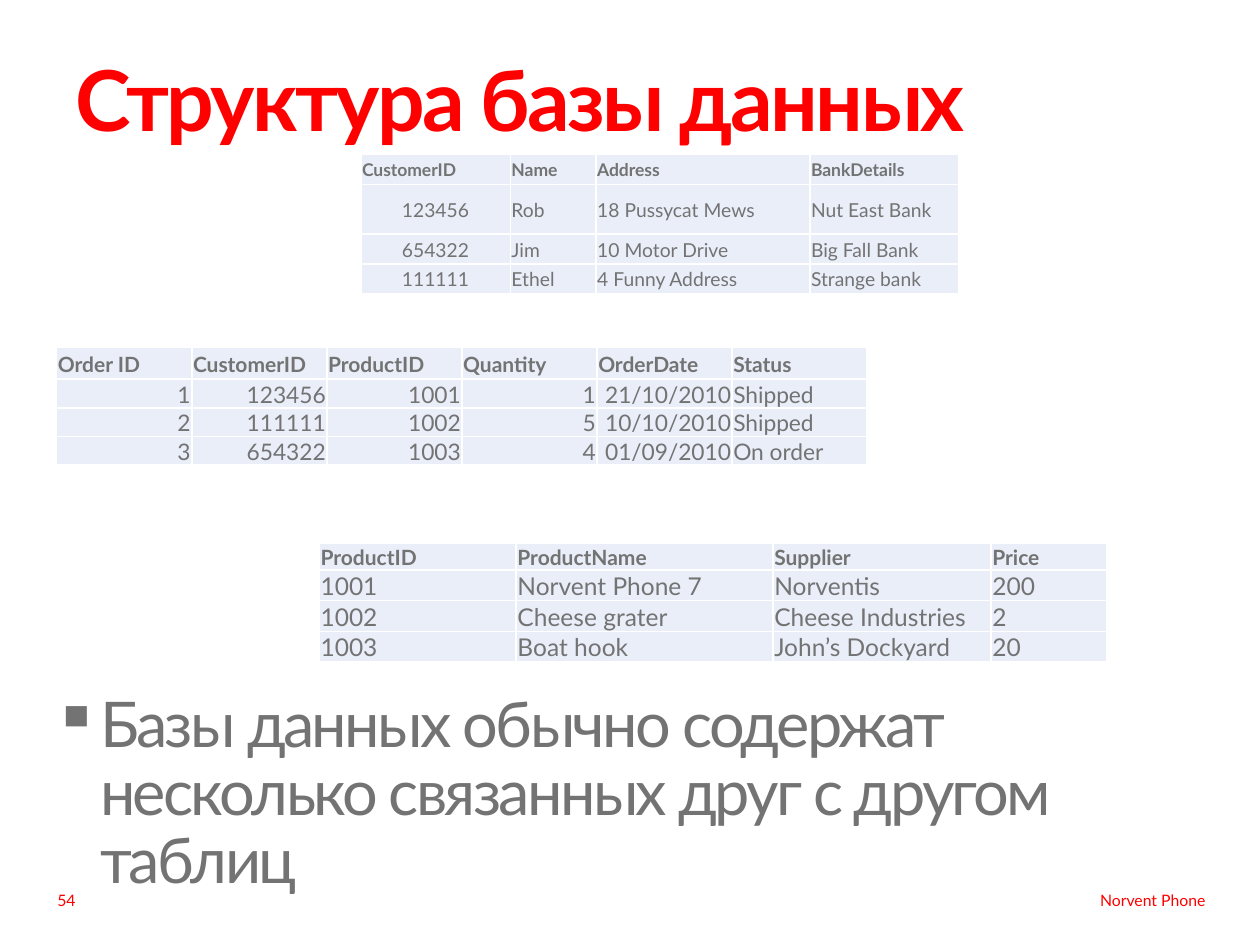
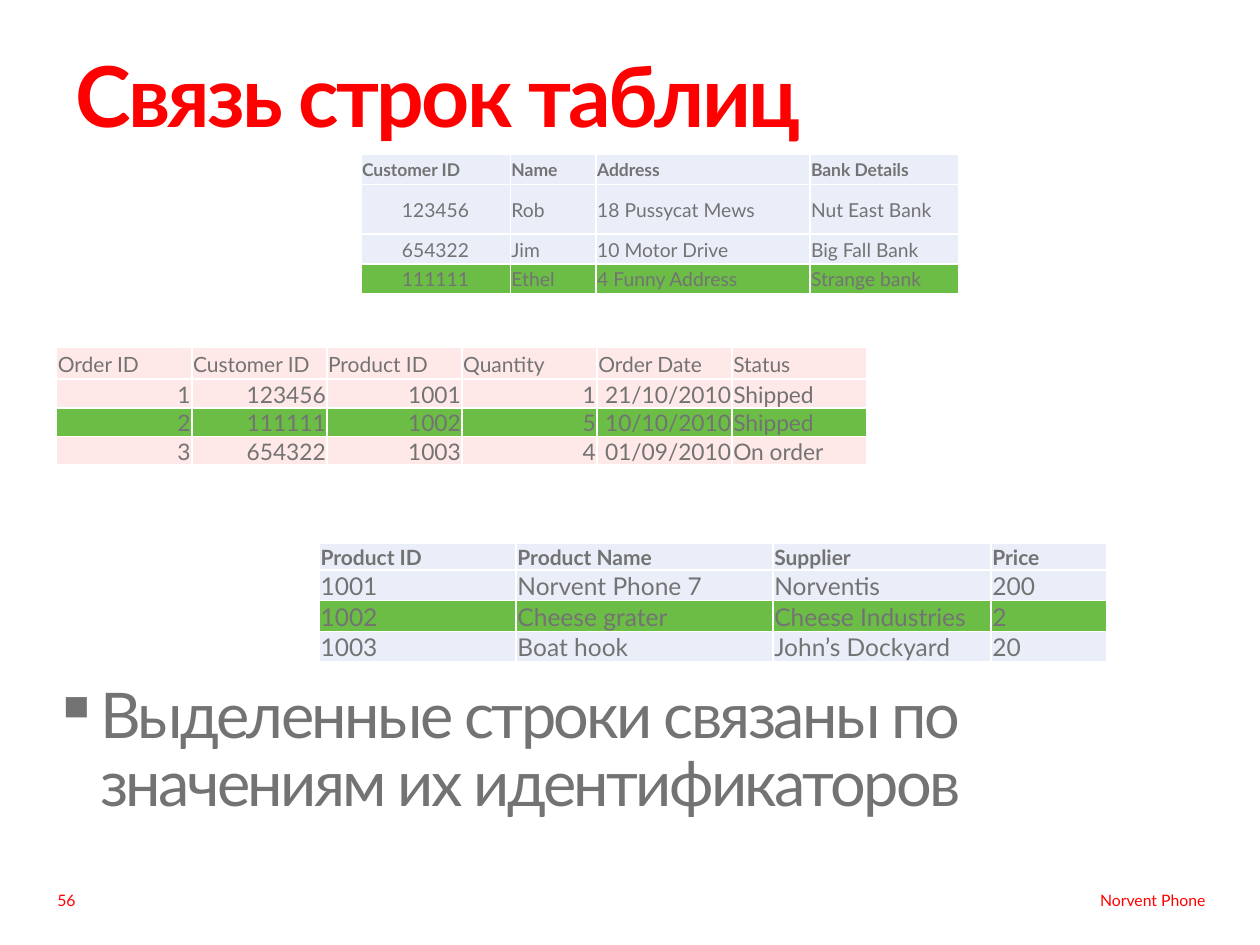
from dataclasses import dataclass

import lxml.etree
import pptx
import pptx.dml.color
import pptx.enum.text
import pptx.oxml.ns
import pptx.util

Pt = pptx.util.Pt
RGBColor = pptx.dml.color.RGBColor
Align = pptx.enum.text.PP_ALIGN
Anchor = pptx.enum.text.MSO_ANCHOR
qn = pptx.oxml.ns.qn

RED = RGBColor(0xFF, 0x00, 0x00)
GREY = RGBColor(0x73, 0x73, 0x73)
WHITE = RGBColor(0xFF, 0xFF, 0xFF)
PALE_BLUE = RGBColor(0xE9, 0xEE, 0xF9)
PALE_PINK = RGBColor(0xFF, 0xE9, 0xE8)
GREEN = RGBColor(0x6B, 0xBD, 0x46)

FONT = "Lato"
BRAND = "Norvent Phone"


@dataclass
class TableLayout:
    left: float
    top: float
    widths: list
    heights: list
    aligns: list
    header_size: float
    body_size: float
    rows: list


ORDERS = TableLayout(
    32.4, 198.7, [77.2] * 6, [18, 16.2, 16.2, 16.2],
    [Align.RIGHT] * 5 + [Align.LEFT], 12, 13,
    [
        ["1", "123456", "1001", "1", "21/10/2010", "Shipped"],
        ["2", "111111", "1002", "5", "10/10/2010", "Shipped"],
        ["3", "654322", "1003", "4", "01/09/2010", "On order"],
    ],
)
PRODUCTS = TableLayout(
    182.5, 310.5, [112.5, 146.8, 124.6, 66.2], [14.6, 17.4, 17.4, 17.4],
    [Align.LEFT] * 4, 12, 14,
    [
        ["1001", f"{BRAND} 7", "Norventis", "200"],
        ["1002", "Cheese grater", "Cheese Industries", "2"],
        ["1003", "Boat hook", "John’s Dockyard", "20"],
    ],
)
CUSTOMERS = TableLayout(
    206.2, 88.4, [85.4, 49, 122.2, 85.4], [17, 28.4, 17, 17],
    [Align.CENTER] + [Align.LEFT] * 3, 10, 11,
    [
        ["123456", "Rob", "18 Pussycat Mews", "Nut East Bank"],
        ["654322", "Jim", "10 Motor Drive", "Big Fall Bank"],
        ["111111", "Ethel", "4 Funny Address", "Strange bank"],
    ],
)


class DeckBuilder:
    def __init__(self):
        self.deck = pptx.Presentation()
        self.deck.slide_width = Pt(720)
        self.deck.slide_height = Pt(540)
        self.page = None

    def start_page(self, number):
        self.page = self.deck.slides.add_slide(self.deck.slide_layouts[6])
        self.text(BRAND, 455.8, 505.4, 240, 18, 9, RED,
                  align=Align.RIGHT, insets=(7.2, 3.6))
        self.text(number, 0, 505.4, 43.2, 18, 9, RED,
                  align=Align.RIGHT, anchor=Anchor.MIDDLE)

    def span(self, para, words, size, color, bold=False):
        span = para.add_run()
        span.text = words
        span.font.name = FONT
        span.font.size = Pt(size)
        span.font.bold = bold
        span.font.color.rgb = color
        return span

    def text(self, words, left, top, width, height, size, color, bold=False,
             align=Align.LEFT, anchor=Anchor.TOP, insets=(0, 0)):
        box = self.page.shapes.add_textbox(Pt(left), Pt(top), Pt(width), Pt(height))
        frame = box.text_frame
        frame.word_wrap = True
        frame.vertical_anchor = anchor
        frame.margin_left = frame.margin_right = Pt(insets[0])
        frame.margin_top = frame.margin_bottom = Pt(insets[1])
        para = frame.paragraphs[0]
        para.alignment = align
        self.span(para, words, size, color, bold)
        return box

    def large_text(self, words, left, top, height, size, color, bold=False):
        box = self.text(words, left, top, 658.8, height, size, color, bold)
        box.text_frame.auto_size = pptx.enum.text.MSO_AUTO_SIZE.SHAPE_TO_FIT_TEXT
        para = box.text_frame.paragraphs[0]
        para.line_spacing = 0.9
        para.runs[0].font._element.set("spc", "-150")
        return para

    def title(self, words, top):
        self.large_text(words, 43.2, top, 52.6, 48, RED, bold=True)

    def bullet(self, words, top):
        para = self.large_text(words, 30.2, top, 78.5, 36, GREY)
        para.space_before = Pt(7.2)
        properties = para._p.get_or_add_pPr()
        properties.set("marL", str(Pt(27)))
        properties.set("indent", str(-Pt(27)))
        color = lxml.etree.SubElement(properties, qn("a:buClr"))
        lxml.etree.SubElement(color, qn("a:srgbClr"), val=str(GREY))
        lxml.etree.SubElement(properties, qn("a:buChar"), char="▪")

    def borders(self, cell):
        properties = cell._tc.get_or_add_tcPr()
        for side in ("a:lnL", "a:lnR", "a:lnT", "a:lnB"):
            line = lxml.etree.SubElement(properties, qn(side), w=str(Pt(1)))
            fill = lxml.etree.SubElement(line, qn("a:solidFill"))
            lxml.etree.SubElement(fill, qn("a:srgbClr"), val=str(WHITE))

    def cell(self, cell, words, size, align, fill, bold):
        cell.margin_left = cell.margin_right = cell.margin_top = Pt(0.72)
        cell.margin_bottom = 0
        cell.vertical_anchor = Anchor.MIDDLE
        self.borders(cell)
        cell.fill.solid()
        cell.fill.fore_color.rgb = fill
        para = cell.text_frame.paragraphs[0]
        para.alignment = align
        self.span(para, words, size, GREY, bold)

    def table(self, layout, headers, fill=PALE_BLUE, bold_header=True, marked_row=None):
        rows = [headers] + layout.rows
        table = self.page.shapes.add_table(
            len(rows), len(headers), Pt(layout.left), Pt(layout.top),
            Pt(sum(layout.widths)), Pt(sum(layout.heights))).table
        table.first_row = False
        table.horz_banding = False
        for column, width in zip(table.columns, layout.widths):
            column.width = Pt(width)
        for r, values in enumerate(rows):
            table.rows[r].height = Pt(layout.heights[r])
            is_header = r == 0
            size = layout.header_size if is_header else layout.body_size
            row_fill = GREEN if r == marked_row else fill
            for c, words in enumerate(values):
                align = Align.LEFT if is_header else layout.aligns[c]
                self.cell(table.cell(r, c), words, size, align, row_fill,
                          is_header and bold_header)


def main():
    builder = DeckBuilder()

    builder.start_page("54")
    builder.title("Структура базы данных", 33.8)
    builder.bullet("Базы данных обычно содержат несколько связанных друг с другом таблиц", 396)
    builder.table(ORDERS, ["Order ID", "CustomerID", "ProductID", "Quantity",
                           "OrderDate", "Status"])
    builder.table(PRODUCTS, ["ProductID", "ProductName", "Supplier", "Price"])
    builder.table(CUSTOMERS, ["CustomerID", "Name", "Address", "BankDetails"])

    builder.start_page("56")
    builder.title("Связь строк таблиц", 31.7)
    builder.bullet("Выделенные строки связаны по значениям их идентификаторов", 391)
    builder.table(ORDERS, ["Order ID", "Customer ID", "Product ID", "Quantity",
                           "Order Date", "Status"],
                  fill=PALE_PINK, bold_header=False, marked_row=2)
    builder.table(PRODUCTS, ["Product ID", "Product Name", "Supplier", "Price"],
                  marked_row=2)
    builder.table(CUSTOMERS, ["Customer ID", "Name", "Address", "Bank Details"],
                  marked_row=3)

    builder.deck.save("out.pptx")


if __name__ == "__main__":
    main()
